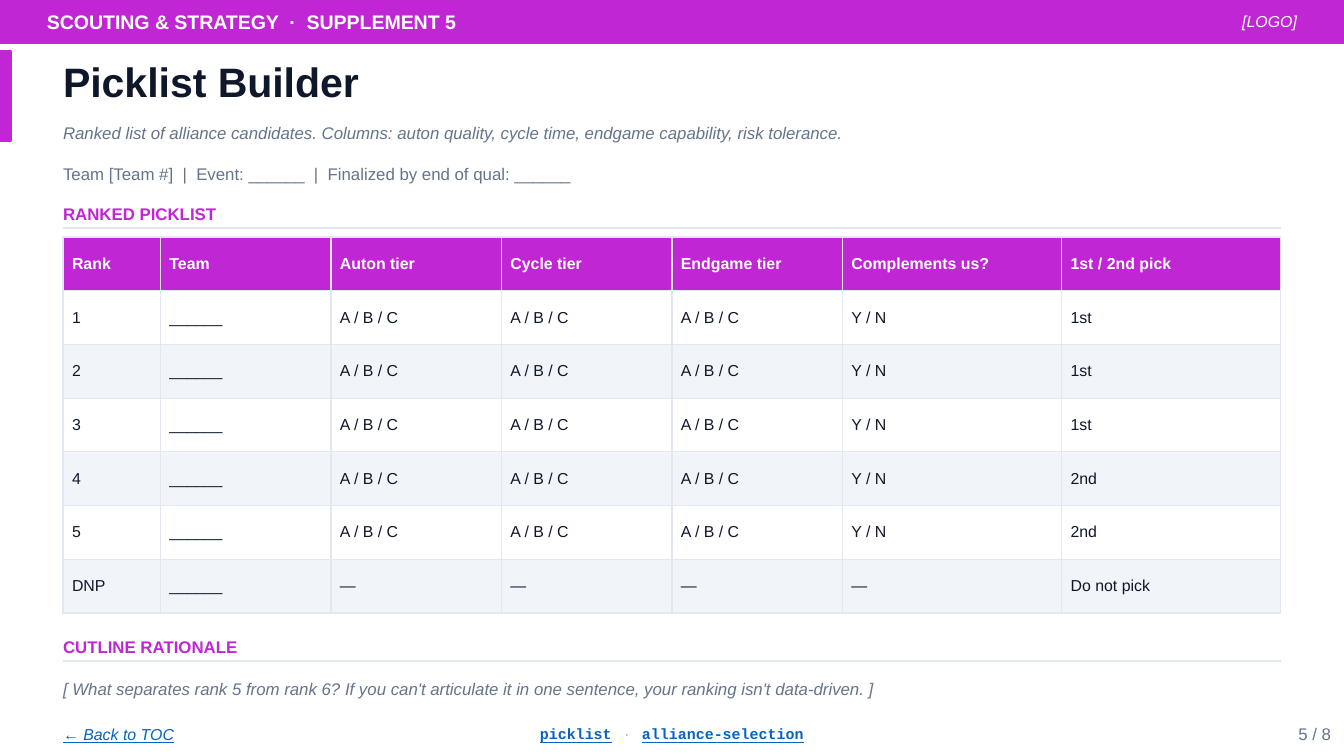
from pptx import Presentation
from pptx.dml.color import RGBColor
from pptx.enum.shapes import MSO_CONNECTOR as Conn, MSO_SHAPE as Shape
from pptx.enum.text import MSO_ANCHOR as Anchor, PP_ALIGN as Align
from pptx.oxml import parse_xml
from pptx.oxml.ns import nsdecls
from pptx.util import Pt

PURPLE = RGBColor(0xC0, 0x26, 0xD3)
WHITE = RGBColor(0xFF, 0xFF, 0xFF)
INK = RGBColor(0x0F, 0x17, 0x2A)
SLATE = RGBColor(0x64, 0x74, 0x8B)
MIST = RGBColor(0x94, 0xA3, 0xB8)
LINK = RGBColor(0x05, 0x63, 0xC1)
RULE = RGBColor(0xE2, 0xE8, 0xF0)
BAND = RGBColor(0xF1, 0xF5, 0xF9)

SANS, MONO = "Arial", "Courier New"
LEFT, WIDE = 63, 1218
PX = 914400 / 134.4

BARS = [(0, 0, 1344, 43), (0, 51, 11, 90)]

TEXTS = [
    ((47, 0, 1102, 43), Align.LEFT,
     [("SCOUTING & STRATEGY  ·  SUPPLEMENT 5", 10.5, WHITE, "b", SANS)]),
    ((1176, 0, 121, 43), Align.RIGHT, [("[LOGO]", 8.5, WHITE, "i", SANS)]),
    ((LEFT, 51, 1227, 61), Align.LEFT,
     [("Picklist Builder", 22, INK, "b", SANS)]),
    ((LEFT, 118, 1227, 30), Align.LEFT,
     [("Ranked list of alliance candidates. Columns: auton quality, "
       "cycle time, endgame capability, risk tolerance.",
       9, SLATE, "i", SANS)]),
    ((LEFT, 159, WIDE, 30), Align.LEFT,
     [("Team [Team #]  |  Event: ______  |  Finalized by end of qual: ______",
       9, SLATE, "", SANS)]),
    ((LEFT, 665, WIDE, 47), Align.LEFT,
     [("[ What separates rank 5 from rank 6? If you can't articulate it in "
       "one sentence, your ranking isn't data-driven. ]",
       9, SLATE, "i", SANS)]),
    ((LEFT, 715, 215, 38), Align.LEFT,
     [("← Back to TOC", 8.5, LINK, "iu", SANS)]),
    ((296, 715, 752, 38), Align.CENTER,
     [("picklist", 8, LINK, "bu", MONO),
      ("   ·   ", 8, MIST, "", SANS),
      ("alliance-selection", 8, LINK, "bu", MONO)]),
    ((1223, 715, 108, 38), Align.RIGHT, [("5 / 8", 9, SLATE, "", SANS)]),
]

HEADS = [("RANKED PICKLIST", 199), ("CUTLINE RATIONALE", 632)]

TOP, TALL = 237, 376
SHARES = [8, 14, 14, 14, 14, 18, 18]
TITLES = ["Rank", "Team", "Auton tier", "Cycle tier", "Endgame tier",
          "Complements us?", "1st / 2nd pick"]
PICKS = [("1", "1st"), ("2", "1st"), ("3", "1st"), ("4", "2nd"), ("5", "2nd")]
ROWS = [TITLES]
ROWS += [[rank, "______"] + ["A / B / C"] * 3 + ["Y / N", pick]
         for rank, pick in PICKS]
ROWS += [["DNP", "______"] + ["—"] * 4 + ["Do not pick"]]


def px(n):
    return round(n * PX)


def add_run(para, text, size, color, marks, face):
    run = para.add_run()
    run.text = text
    font = run.font
    font.size, font.name = Pt(size), face
    font.color.rgb = color
    font.bold, font.italic = "b" in marks, "i" in marks
    font.underline = "u" in marks


def add_text(slide, box, align, runs):
    frame = slide.shapes.add_textbox(*map(px, box)).text_frame
    frame.word_wrap = True
    frame.vertical_anchor = Anchor.MIDDLE
    frame.margin_left = frame.margin_right = 0
    frame.margin_top = frame.margin_bottom = 0
    para = frame.paragraphs[0]
    para.alignment = align
    for run in runs:
        add_run(para, *run)


def add_bar(slide, box):
    bar = slide.shapes.add_shape(Shape.RECTANGLE, *map(px, box))
    bar.shadow.inherit = False
    bar.fill.solid()
    bar.fill.fore_color.rgb = PURPLE
    bar.line.color.rgb = PURPLE
    bar.line.width = Pt(1)


def add_head(slide, text, top):
    add_text(slide, (LEFT, top, WIDE, 30), Align.LEFT,
             [(text, 9, PURPLE, "b", SANS)])
    y = px(top + 29)
    rule = slide.shapes.add_connector(
        Conn.STRAIGHT, px(LEFT), y, px(LEFT + WIDE), y)
    rule.line.color.rgb = RULE
    rule.line.width = Pt(0.75)
    rule._element.spPr.append(parse_xml(f"<a:effectLst {nsdecls('a')}/>"))


def add_edges(cell):
    props = cell._tc.get_or_add_tcPr()
    for i, side in enumerate("LRTB"):
        props.insert(i, parse_xml(
            f'<a:ln{side} {nsdecls("a")} w="{Pt(0.75)}"><a:solidFill>'
            f'<a:srgbClr val="{RULE}"/></a:solidFill></a:ln{side}>'))


def add_grid(slide):
    grid = slide.shapes.add_table(
        len(ROWS), len(SHARES), px(LEFT), px(TOP), px(WIDE), px(TALL)).table
    grid.first_row = grid.horz_banding = False
    for col, share in zip(grid.columns, SHARES):
        col.width = px(WIDE * share / sum(SHARES))
    for r, row in enumerate(ROWS):
        grid.rows[r].height = px(TALL / len(ROWS))
        fill = PURPLE if r == 0 else WHITE if r % 2 else BAND
        color, marks = (WHITE, "b") if r == 0 else (INK, "")
        for c, text in enumerate(row):
            cell = grid.cell(r, c)
            cell.fill.solid()
            cell.fill.fore_color.rgb = fill
            cell.vertical_anchor = Anchor.MIDDLE
            cell.margin_left = cell.margin_right = px(9)
            cell.margin_top = cell.margin_bottom = px(5)
            add_run(cell.text_frame.paragraphs[0],
                    text, 8.5, color, marks, SANS)
            add_edges(cell)


def main():
    deck = Presentation()
    deck.slide_width, deck.slide_height = px(1344), px(756)
    slide = deck.slides.add_slide(deck.slide_layouts[6])
    for box in BARS:
        add_bar(slide, box)
    for item in TEXTS:
        add_text(slide, *item)
    for head in HEADS:
        add_head(slide, *head)
    add_grid(slide)
    deck.save("out.pptx")


if __name__ == "__main__":
    main()
